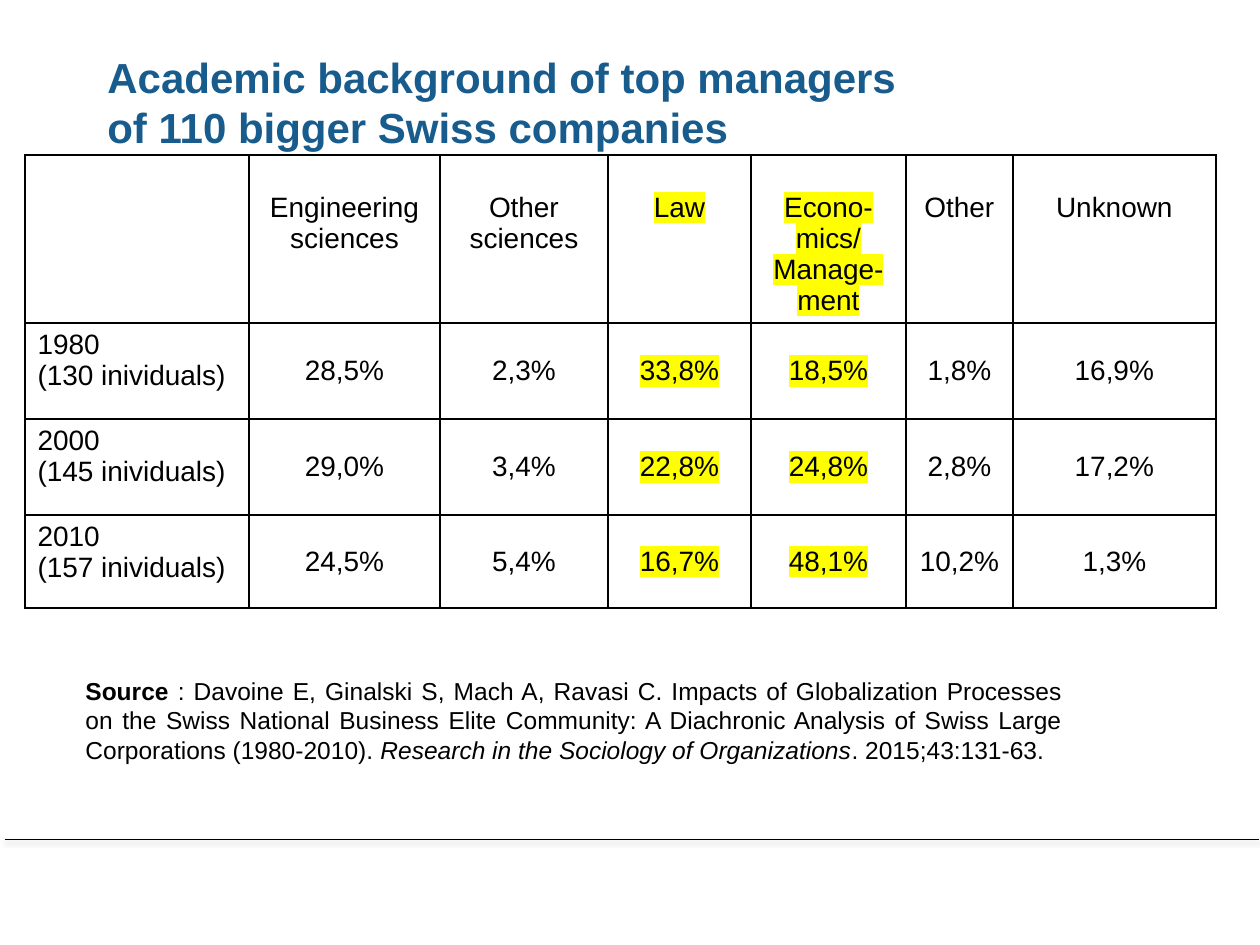
from lxml import etree
from pptx import Presentation
from pptx.dml.color import RGBColor
from pptx.enum.shapes import MSO_CONNECTOR
from pptx.enum.text import MSO_ANCHOR, PP_ALIGN
from pptx.oxml import parse_xml
from pptx.oxml.ns import nsdecls, qn
from pptx.util import Emu, Pt

LEFT, CENTER, JUSTIFY = PP_ALIGN.LEFT, PP_ALIGN.CENTER, PP_ALIGN.JUSTIFY
TOP, MIDDLE = MSO_ANCHOR.TOP, MSO_ANCHOR.MIDDLE
BLACK = RGBColor(0x00, 0x00, 0x00)
BLUE = RGBColor(0x18, 0x5B, 0x8D)
YELLOW = RGBColor(0xFF, 0xFF, 0x00)
GRAY = RGBColor(0x80, 0x80, 0x80)

# Content
TITLE = ["Academic background of top managers", "of 110 bigger Swiss companies"]
FIELDS = ["Engineering sciences", "Other sciences", "Law",
          "Econo-mics/ Manage-ment", "Other", "Unknown"]
HIGHLIGHTED_COLUMNS = (3, 4)
YEARS = [
    (["1980", "(130 inividuals)"], ["28,5%", "2,3%", "33,8%", "18,5%", "1,8%", "16,9%"]),
    (["2000", "(145 inividuals)"], ["29,0%", "3,4%", "22,8%", "24,8%", "2,8%", "17,2%"]),
    (["2010", "(157 inividuals)"], ["24,5%", "5,4%", "16,7%", "48,1%", "10,2%", "1,3%"]),
]
SOURCE = [
    ("Source", "bold"),
    (" : Davoine E, Ginalski S, Mach A, Ravasi C. Impacts of Globalization Processes "
     "on the Swiss National Business Elite Community: A Diachronic Analysis of Swiss "
     "Large Corporations (1980-2010). ", ""),
    ("Research in the Sociology of Organizations", "italic"),
    (". 2015;43:131-63.", ""),
]

# Layout in px
COLUMN_WIDTHS = [224, 191, 168, 143, 155, 107, 203]
ROW_HEIGHTS = [168, 96, 96, 93]
TABLE_LEFT, TABLE_TOP = 25, 155
HEADER_MARGIN = 37


def px(length):
    return Emu(length * 914400 // 126)


def write(frame, paragraphs, size, color=BLACK, align=LEFT, style="", highlight=None):
    """Each paragraph is a string or a list of (text, style) runs."""
    for index, content in enumerate(paragraphs):
        paragraph = frame.paragraphs[0] if index == 0 else frame.add_paragraph()
        paragraph.alignment = align
        runs = [(content, style)] if isinstance(content, str) else content
        for text, run_style in runs:
            run = paragraph.add_run()
            run.text = text
            font = run.font
            font.size = Pt(size)
            font.bold = run_style == "bold"
            font.italic = run_style == "italic"
            font.color.rgb = color
            if highlight:
                mark = etree.SubElement(run._r.get_or_add_rPr(), qn("a:highlight"))
                etree.SubElement(mark, qn("a:srgbClr"), val=str(highlight))
            font.name = "Arial"


def add_text_box(slide, box, paragraphs, size, anchor=TOP, wrap=True, **text_format):
    frame = slide.shapes.add_textbox(*map(px, box)).text_frame
    frame.word_wrap = wrap
    frame.vertical_anchor = anchor
    write(frame, paragraphs, size, **text_format)


def add_borders(cell):
    properties = cell._tc.get_or_add_tcPr()
    for index, side in enumerate(("lnL", "lnR", "lnT", "lnB")):
        properties.insert(index, parse_xml(
            f'<a:{side} {nsdecls("a")} w="{Pt(1)}"><a:solidFill>'
            f'<a:srgbClr val="{BLACK}"/></a:solidFill></a:{side}>'))


def add_footer_line(slide):
    line = slide.shapes.add_connector(
        MSO_CONNECTOR.STRAIGHT, px(5), px(839), px(1259), px(839))
    line.line.color.rgb = BLACK
    line.line.width = Pt(0.25)
    line._element.spPr.append(parse_xml(
        f'<a:effectLst {nsdecls("a")}><a:outerShdw blurRad="{Pt(3.1)}" '
        f'dist="{Pt(1.6)}" dir="5400000" rotWithShape="0"><a:srgbClr val="{GRAY}">'
        '<a:alpha val="38000"/></a:srgbClr></a:outerShdw></a:effectLst>'))


def add_background_table(slide):
    rows = [[[]] + [[field] for field in FIELDS]]
    rows += [[label] + [[value] for value in values] for label, values in YEARS]
    table = slide.shapes.add_table(
        len(rows), len(COLUMN_WIDTHS), px(TABLE_LEFT), px(TABLE_TOP),
        px(sum(COLUMN_WIDTHS)), px(sum(ROW_HEIGHTS))).table
    table.first_row = table.horz_banding = False
    for column, width in zip(table.columns, COLUMN_WIDTHS):
        column.width = px(width)
    for row, height in zip(table.rows, ROW_HEIGHTS):
        row.height = px(height)

    for row_index, row in enumerate(rows):
        for column_index, paragraphs in enumerate(row):
            cell = table.cell(row_index, column_index)
            cell.fill.background()
            add_borders(cell)
            if row_index == 0:
                cell.margin_top = px(HEADER_MARGIN)
            elif column_index > 0:
                cell.vertical_anchor = MIDDLE
            write(cell.text_frame, paragraphs, 16,
                  align=CENTER if column_index else JUSTIFY,
                  highlight=YELLOW if column_index in HIGHLIGHTED_COLUMNS else None)


def main():
    presentation = Presentation()
    presentation.slide_width, presentation.slide_height = px(1260), px(945)
    slide = presentation.slides.add_slide(presentation.slide_layouts[6])

    add_footer_line(slide)
    add_background_table(slide)
    # Title and reference
    add_text_box(slide, (95, 45, 833, 165), TITLE, 24, wrap=False,
                 color=BLUE, style="bold")
    add_text_box(slide, (73, 669, 1002, 102), [SOURCE], 14, anchor=MIDDLE, align=JUSTIFY)

    presentation.save("out.pptx")


if __name__ == "__main__":
    main()
